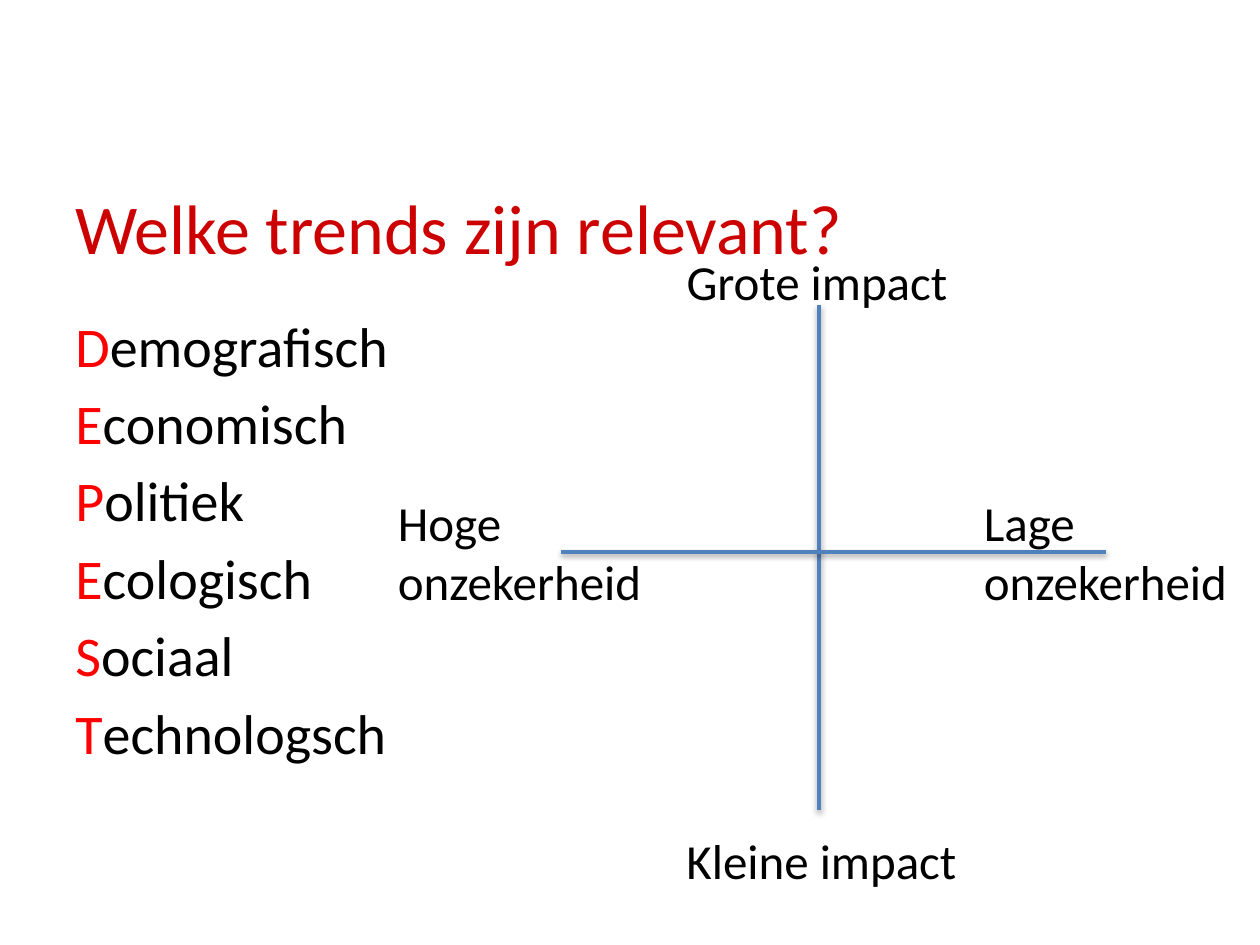
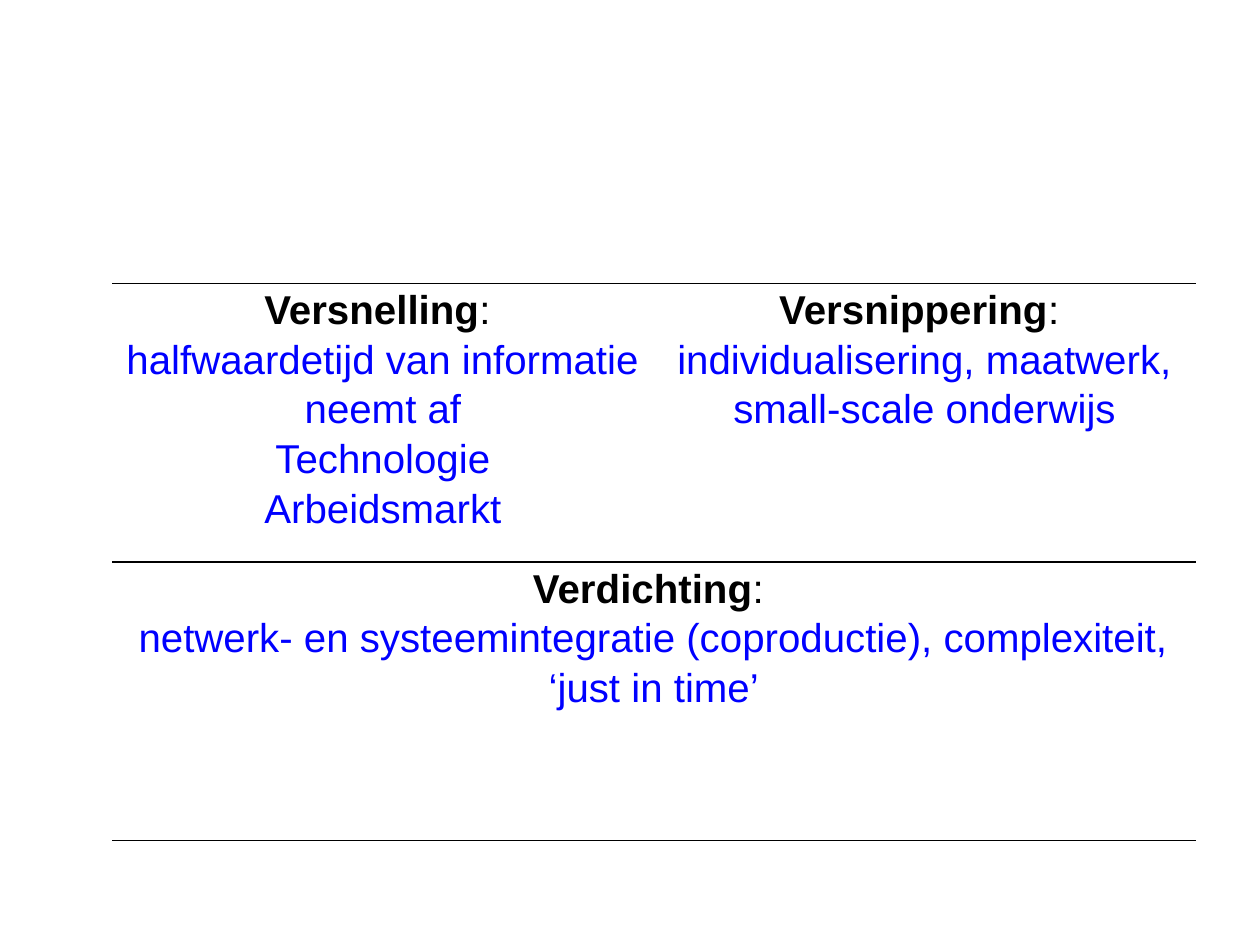
from lxml import etree
from pptx import Presentation
from pptx.dml.color import RGBColor
from pptx.enum.shapes import MSO_CONNECTOR
from pptx.enum.text import MSO_ANCHOR, MSO_AUTO_SIZE, PP_ALIGN
from pptx.oxml import parse_xml
from pptx.oxml.ns import nsdecls, qn
from pptx.util import Inches, Pt

COLORS = {"title": "CC0000", "initial": "FF0000", "text": "000000",
          "detail": "0000FF", "axis": "4F81BD", "rule": "000000"}


def add_run(paragraph, text, color, **font_format):
    run = paragraph.add_run()
    run.text = text
    run.font.color.rgb = RGBColor.from_string(COLORS[color])
    for attribute, value in font_format.items():
        setattr(run.font, attribute, value)


def add_text_frame(slide, left, top, width, height, **frame_format):
    box = slide.shapes.add_textbox(Inches(left), Inches(top), Inches(width), Inches(height))
    for attribute, value in frame_format.items():
        setattr(box.text_frame, attribute, value)
    return box.text_frame


prs = Presentation()
prs.slide_width, prs.slide_height = Inches(10), Inches(7.5)
blank = prs.slide_layouts[6]

# Slide 1: DEPEST trends and the impact/uncertainty axes
trends_slide = prs.slides.add_slide(blank)
title = add_text_frame(trends_slide, 0.5, 1.17, 9, 1.25,
                       word_wrap=True, vertical_anchor=MSO_ANCHOR.MIDDLE)
add_run(title.paragraphs[0], "Welke trends zijn relevant?", "title",
        name="Calibri", size=Pt(40))

trends = ["Demografisch", "Economisch", "Politiek", "Ecologisch", "Sociaal", "Technologsch"]
trend_list = add_text_frame(trends_slide, 0.5, 2.42, 9, 4.02, word_wrap=True)
for index, trend in enumerate(trends):
    paragraph = trend_list.add_paragraph() if index else trend_list.paragraphs[0]
    if index:
        paragraph.space_before = Pt(5.8)
    add_run(paragraph, trend[0], "initial", name="Calibri", size=Pt(32))
    add_run(paragraph, trend[1:], "text", name="Calibri", size=Pt(32))

axes = [(6.5, 2.42, 6.5, 6.43), (4.45, 4.38, 8.78, 4.38)]
for ends in axes:
    axis = trends_slide.shapes.add_connector(MSO_CONNECTOR.STRAIGHT, *map(Inches, ends))
    axis.line.color.rgb = RGBColor.from_string(COLORS["axis"])
    axis.line.width = Pt(2)
    axis._element.spPr.append(parse_xml(
        f'<a:effectLst {nsdecls("a")}>'
        '<a:outerShdw blurRad="40000" dist="20000" dir="5400000" rotWithShape="0">'
        '<a:srgbClr val="000000"><a:alpha val="38000"/></a:srgbClr>'
        '</a:outerShdw></a:effectLst>'))

axis_labels = [
    (5.35, 1.95, 2.29, 0.57, ["Grote impact"]),
    (5.35, 6.54, 2.37, 0.57, ["Kleine impact"]),
    (3.06, 3.86, 2.15, 1.04, ["Hoge", "onzekerheid"]),
    (7.71, 3.86, 2.15, 1.04, ["Lage", "onzekerheid"]),
]
for *place, lines in axis_labels:
    label = add_text_frame(trends_slide, *place, word_wrap=False,
                           auto_size=MSO_AUTO_SIZE.SHAPE_TO_FIT_TEXT)
    for index, line in enumerate(lines):
        paragraph = label.add_paragraph() if index else label.paragraphs[0]
        add_run(paragraph, line, "text", name="Calibri", size=Pt(28))

# Slide 2: three developments between horizontal rules
developments_slide = prs.slides.add_slide(blank)
developments = developments_slide.shapes.add_table(
    2, 2, Inches(0.89), Inches(2.25), Inches(8.6), Inches(4.42)).table
developments.first_row = developments.horz_banding = False
for column in developments.columns:
    column.width = Inches(4.3)
for row in developments.rows:
    row.height = Inches(2.21)

cell_format = {"margin_left": 0, "margin_right": 0, "margin_top": 0, "margin_bottom": 0}
for cell in developments.iter_cells():
    for attribute, value in cell_format.items():
        setattr(cell, attribute, value)
    properties = cell._tc.get_or_add_tcPr()
    for side in ("lnL", "lnR", "lnT", "lnB"):
        border = etree.SubElement(properties, qn(f"a:{side}"), w=str(Pt(1)))
        if side in ("lnT", "lnB"):
            fill = etree.SubElement(border, qn("a:solidFill"))
            etree.SubElement(fill, qn("a:srgbClr"), val=COLORS["rule"])
        else:
            etree.SubElement(border, qn("a:noFill"))
    cell.fill.background()
developments.cell(1, 0).merge(developments.cell(1, 1))

contents = {
    (0, 0): ("Versnelling", ["halfwaardetijd van informatie neemt af",
                             "Technologie", "Arbeidsmarkt"]),
    (0, 1): ("Versnippering", ["individualisering, maatwerk, small-scale onderwijs"]),
    (1, 0): ("Verdichting", ["netwerk- en systeemintegratie (coproductie), "
                             "complexiteit, ‘just in time’"]),
}
cell_font = {"name": "Arial", "size": Pt(23)}
for position, (heading, details) in contents.items():
    frame = developments.cell(*position).text_frame
    add_run(frame.paragraphs[0], heading, "text", bold=True, **cell_font)
    add_run(frame.paragraphs[0], ": ", "text", bold=False, **cell_font)
    for detail in details:
        add_run(frame.add_paragraph(), detail, "detail", bold=False, **cell_font)
    for paragraph in frame.paragraphs:
        paragraph.alignment = PP_ALIGN.CENTER
        paragraph.line_spacing = 1.1

prs.save("out.pptx")
